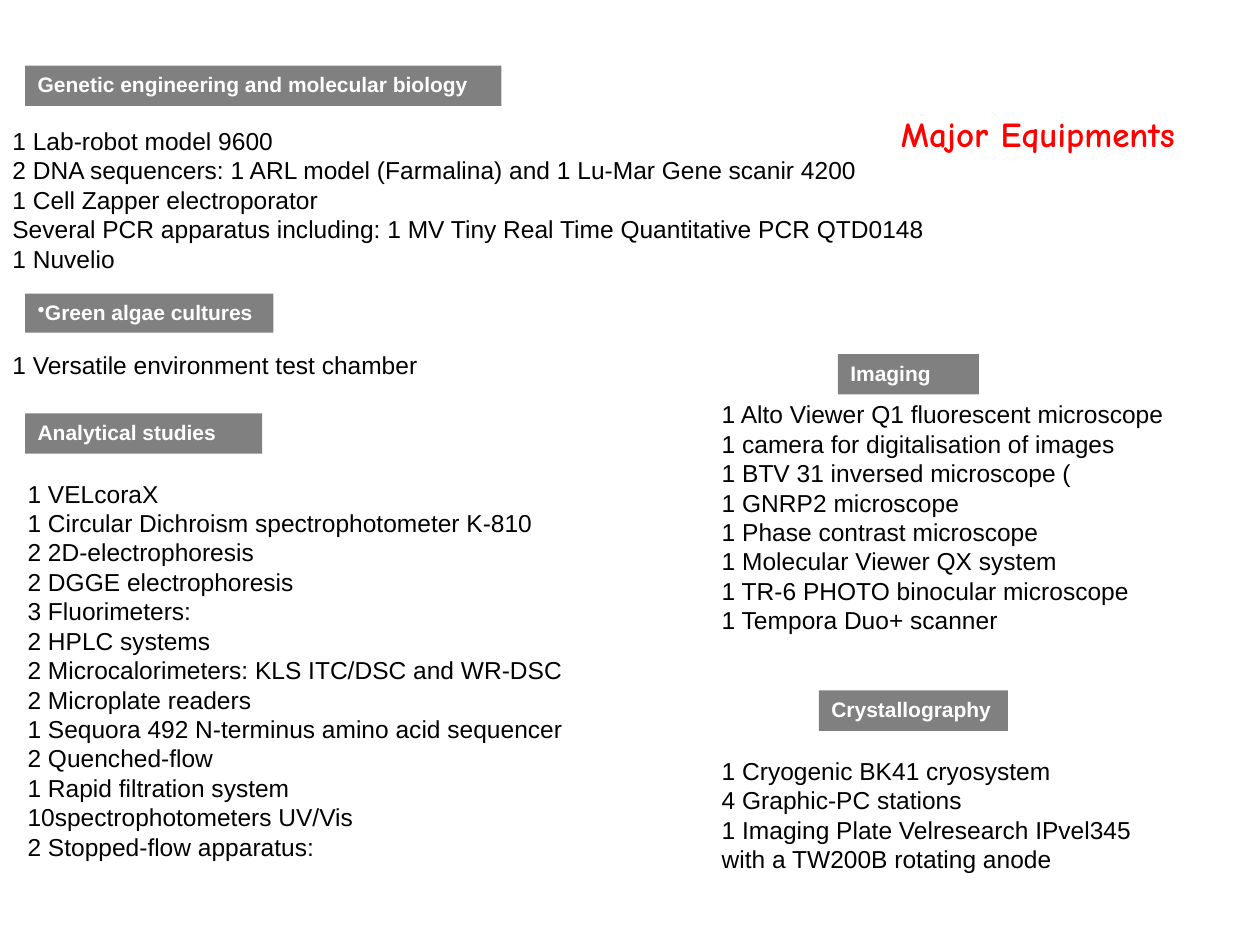
from dataclasses import dataclass

from lxml.etree import SubElement
from pptx import Presentation
from pptx.dml.color import RGBColor as Color
from pptx.enum.shapes import MSO_SHAPE as Shape
from pptx.enum.text import MSO_ANCHOR as Anchor, PP_ALIGN as Align
from pptx.oxml.ns import qn
from pptx.util import Pt

EMU_PER_PX = 9144
TITLE_ONLY = 5


@dataclass(frozen=True)
class Theme:
    """Colours, fonts and type sizes of the slide."""
    title_font: str = "Comic Neue"
    body_font: str = "Arial"
    title_color: Color = Color(0xFF, 0x00, 0x00)
    label_fill: Color = Color(0x80, 0x80, 0x80)
    label_color: Color = Color(0xFF, 0xFF, 0xFF)
    body_color: Color = Color(0x00, 0x00, 0x00)
    title_size: int = 20
    label_size: int = 12
    body_size: int = 14
    body_leading: float = 16.8


THEME = Theme()

SECTIONS = [
    ("Genetic engineering and molecular biology", False, (20, 52, 378, 32), (0, 95, 748, 127), [
        "1 Lab-robot model 9600",
        "2 DNA sequencers: 1 ARL model (Farmalina) and 1 Lu-Mar Gene scanir 4200",
        "1 Cell Zapper electroporator",
        "Several PCR apparatus including: 1 MV Tiny Real Time Quantitative PCR QTD0148",
        "1 Nuvelio",
    ]),
    ("Green algae cultures", True, (20, 233, 197, 31), (0, 273, 343, 34), [
        "1 Versatile environment test chamber",
    ]),
    ("Analytical studies", False, (20, 328, 188, 32), (12, 375, 449, 347), [
        "1 VELcoraX",
        "1 Circular Dichroism spectrophotometer K-810",
        "2 2D-electrophoresis",
        "2 DGGE electrophoresis",
        "3 Fluorimeters:",
        "2 HPLC systems",
        "2 Microcalorimeters: KLS ITC/DSC and WR-DSC",
        "2 Microplate readers",
        "1 Sequora 492 N-terminus amino acid sequencer",
        "2 Quenched-flow",
        "1 Rapid filtration system",
        "10spectrophotometers UV/Vis",
        "2 Stopped-flow apparatus:",
    ]),
    ("Imaging", False, (665, 281, 112, 32), (563, 312, 386, 199), [
        "1 Alto Viewer Q1 fluorescent microscope",
        "1 camera for digitalisation of images",
        "1 BTV 31 inversed microscope (",
        "1 GNRP2 microscope",
        "1 Phase contrast microscope",
        "1 Molecular Viewer QX system",
        "1 TR-6 PHOTO binocular microscope",
        "1 Tempora Duo+ scanner",
    ]),
    ("Crystallography", False, (650, 548, 150, 32), (563, 595, 367, 104), [
        "1 Cryogenic BK41 cryosystem",
        "4 Graphic-PC stations",
        "1 Imaging Plate Velresearch IPvel345",
        "with a TW200B rotating anode",
    ]),
]


def to_emu(frame):
    """Turn a frame in px into EMU."""
    return [length * EMU_PER_PX for length in frame]


def format_text(text_frame, font, size, color, bold=False):
    """Left-align every paragraph and format its runs."""
    for para in text_frame.paragraphs:
        para.alignment = Align.LEFT
        for span in para.runs:
            span.font.name = font
            span.font.size = Pt(size)
            span.font.bold = bold
            span.font.color.rgb = color


def add_title(page, text, frame):
    """Move and format the title placeholder."""
    title = page.shapes.title
    title.left, title.top, title.width, title.height = to_emu(frame)
    title.text_frame.text = text
    title.text_frame.word_wrap = False
    title.text_frame.vertical_anchor = Anchor.MIDDLE
    format_text(title.text_frame, THEME.title_font, THEME.title_size, THEME.title_color, True)


def add_label(page, text, frame, bulleted):
    """Add a grey section label."""
    label = page.shapes.add_shape(Shape.RECTANGLE, *to_emu(frame))
    label.shadow.inherit = False
    label.fill.solid()
    label.fill.fore_color.rgb = THEME.label_fill
    label.line.fill.background()
    label.text_frame.text = text
    label.text_frame.word_wrap = True
    label.text_frame.vertical_anchor = Anchor.TOP
    if bulleted:
        properties = label.text_frame.paragraphs[0]._p.get_or_add_pPr()
        SubElement(properties, qn("a:buChar")).set("char", "•")
    format_text(label.text_frame, THEME.body_font, THEME.label_size, THEME.label_color, True)


def add_list(page, items, frame):
    """Add the equipment list of a section, one item to a paragraph."""
    box = page.shapes.add_textbox(*to_emu(frame))
    box.text_frame.text = "\n".join(items)
    box.text_frame.word_wrap = True
    format_text(box.text_frame, THEME.body_font, THEME.body_size, THEME.body_color)
    for para in box.text_frame.paragraphs:
        para.line_spacing = Pt(THEME.body_leading)


def main():
    """Build the equipment slide."""
    deck = Presentation()
    deck.slide_width, deck.slide_height = to_emu((1000, 750))
    page = deck.slides.add_slide(deck.slide_layouts[TITLE_ONLY])
    add_title(page, "Major Equipments", (705, 84, 261, 44))
    for heading, bulleted, label_frame, list_frame, items in SECTIONS:
        add_label(page, heading, label_frame, bulleted)
        add_list(page, items, list_frame)
    deck.save("out.pptx")


if __name__ == "__main__":
    main()
